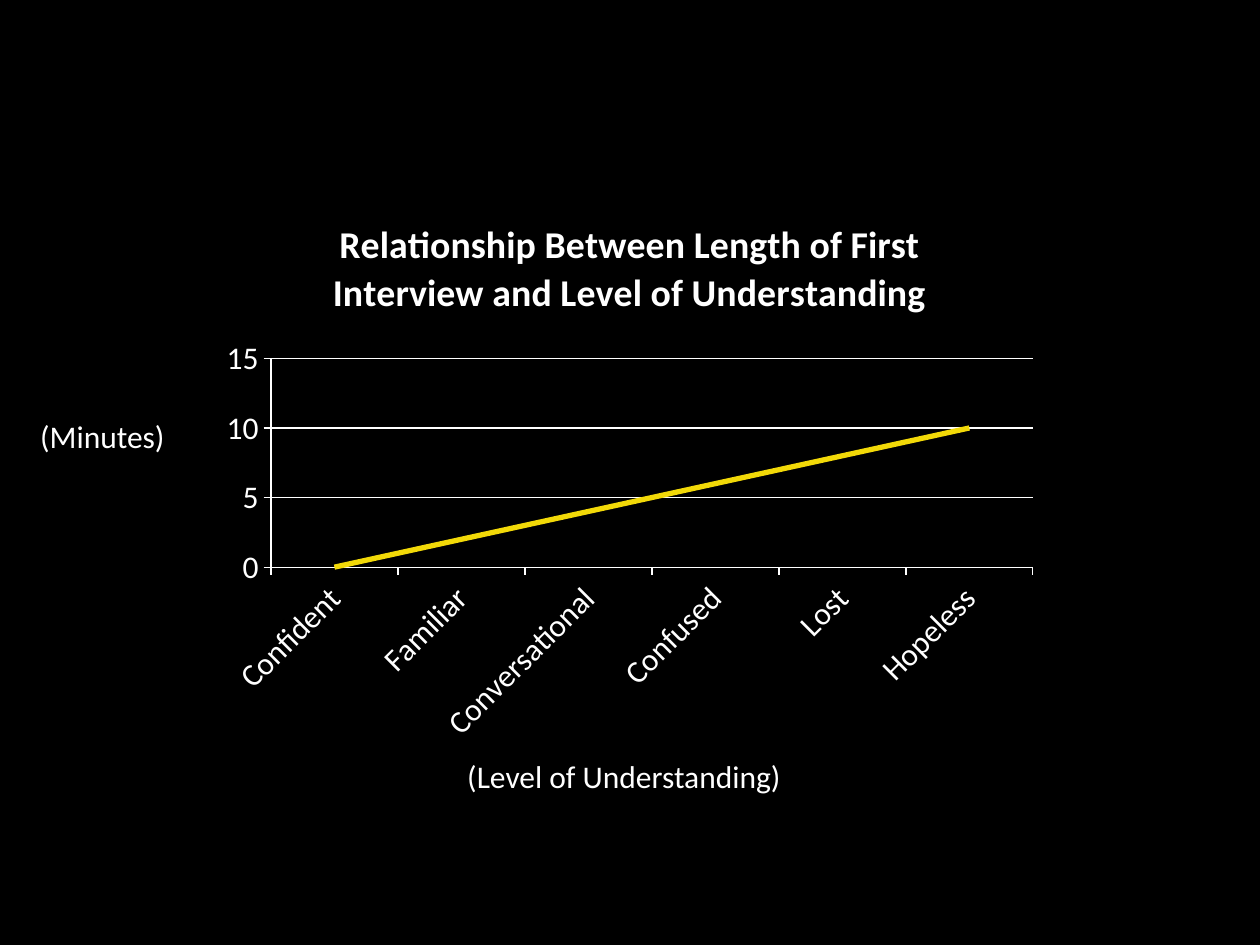
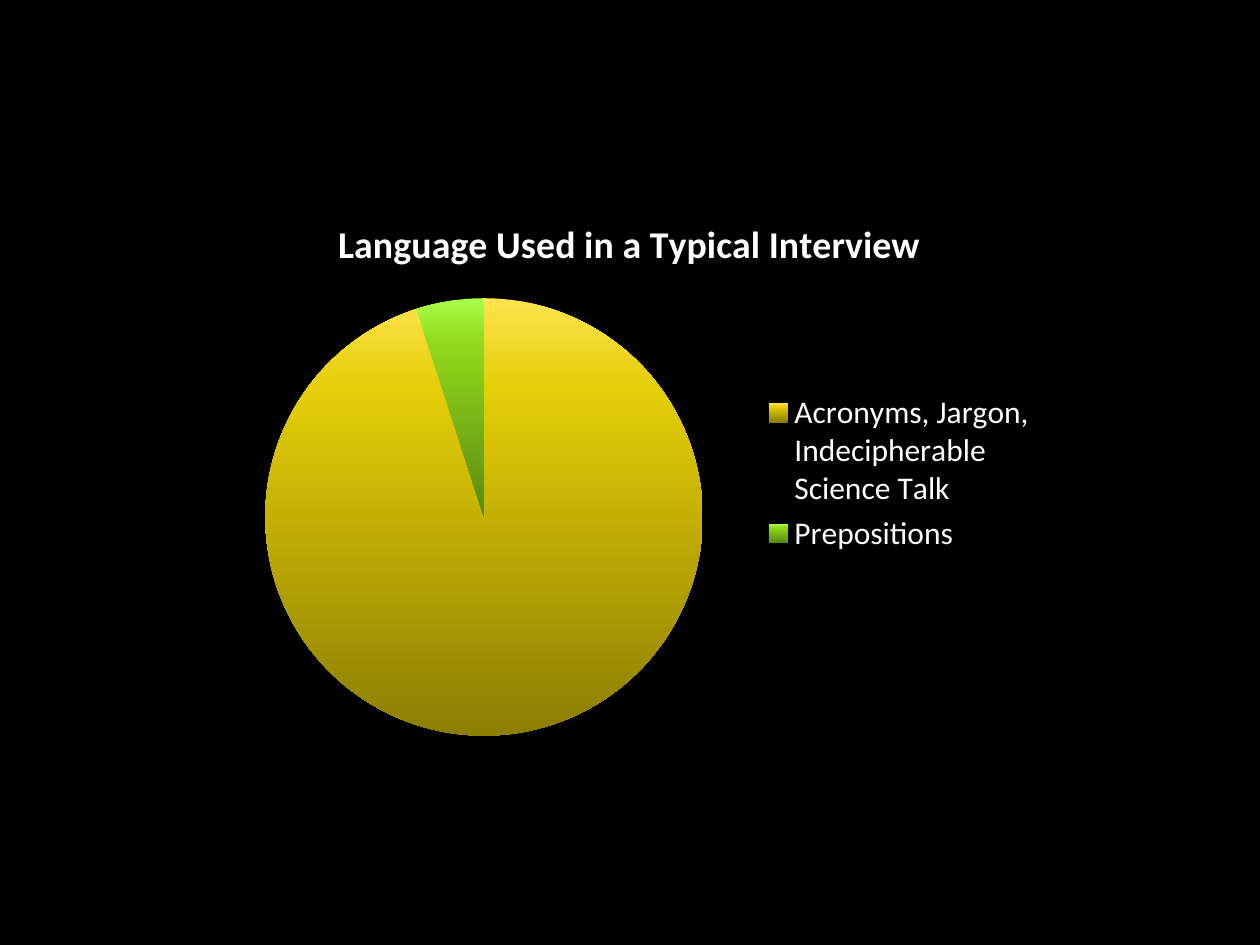
from copy import deepcopy

from pptx import Presentation
from pptx.chart.data import CategoryChartData
from pptx.dml.color import RGBColor
from pptx.enum.chart import XL_CHART_TYPE, XL_LEGEND_POSITION, XL_MARKER_STYLE, XL_TICK_MARK
from pptx.enum.text import MSO_AUTO_SIZE
from pptx.oxml.ns import qn
from pptx.util import Cm, Pt

BLACK, WHITE, YELLOW = "000000", "FFFFFF", "F2D908"
SLICE_SHADES = [("FFE34F", "E6CE08", "8C7E03"), ("A9FF4B", "92DA1C", "5A8812")]
SHADE_POSITIONS = (0, 0.2, 1)


def color(hex_code):
    return RGBColor.from_string(hex_code)


class Deck:
    """Holds the shared style and the current slide, and adds elements to it."""

    font_name, text_size, title_size = "Calibri", Pt(18), Pt(21.6)
    chart_area = Cm(4.23), Cm(3.89), Cm(16.93), Cm(11.29)

    def __init__(self):
        self.prs = Presentation()
        self.prs.slide_width, self.prs.slide_height = Cm(25.4), Cm(19.05)
        backdrop = self.prs.slide_master.background.fill
        backdrop.solid()
        backdrop.fore_color.rgb = color(BLACK)

    def add_slide(self):
        self.slide = self.prs.slides.add_slide(self.prs.slide_layouts[6])

    def style_font(self, font, size, bold=False):
        font.name, font.size, font.bold = self.font_name, size, bold
        font.color.rgb = color(WHITE)

    def style_line(self, line, hex_code, width):
        line.color.rgb = color(hex_code)
        line.width = Pt(width)

    def add_label(self, text, left, top, width):
        label = self.slide.shapes.add_textbox(Cm(left), Cm(top), Cm(width), Cm(1.03))
        frame = label.text_frame
        frame.word_wrap = True
        frame.auto_size = MSO_AUTO_SIZE.SHAPE_TO_FIT_TEXT
        frame.text = text
        self.style_font(frame.paragraphs[0].font, self.text_size)

    def add_chart(self, kind, title, series_name, values):
        data = CategoryChartData()
        data.categories = list(values)
        data.add_series(series_name, values.values())
        chart = self.slide.shapes.add_chart(kind, *self.chart_area, data).chart
        self.style_font(chart.font, self.text_size)
        chart.has_title = True
        heading = chart.chart_title.text_frame
        heading.text = title
        self.style_font(heading.paragraphs[0].font, self.title_size, bold=True)
        chart.has_legend = False
        return chart

    def add_line_chart(self, title, series_name, values):
        chart = self.add_chart(XL_CHART_TYPE.LINE, title, series_name, values)
        chart.plots[0].vary_by_categories = False
        for axis in (chart.category_axis, chart.value_axis):
            self.style_line(axis.format.line, WHITE, 0.75)
            axis.major_tick_mark = XL_TICK_MARK.OUTSIDE
            self.style_font(axis.tick_labels.font, self.text_size)
        chart.category_axis.element_body = None
        slant = chart.category_axis.element if hasattr(chart.category_axis, "element") else None
        if slant is None:
            slant = chart.element.find(".//" + qn("c:catAx"))
        slant.find(qn("c:txPr")).find(qn("a:bodyPr")).set("rot", "-2700000")
        chart.value_axis.has_major_gridlines = True
        self.style_line(chart.value_axis.major_gridlines.format.line, WHITE, 0.75)
        series = chart.plots[0].series[0]
        series.smooth = False
        series.marker.style = XL_MARKER_STYLE.NONE
        self.style_line(series.format.line, YELLOW, 3)

    def add_pie_chart(self, title, values, slice_shades):
        chart = self.add_chart(XL_CHART_TYPE.PIE, title, title, values)
        chart.plots[0].vary_by_categories = True
        chart.has_legend = True
        chart.legend.position = XL_LEGEND_POSITION.RIGHT
        chart.legend.include_in_layout = False
        self.style_font(chart.legend.font, self.text_size)
        points = chart.plots[0].series[0].points
        for index, shades in enumerate(slice_shades):
            fill = points[index].format.fill
            fill.gradient()
            fill.gradient_angle = 270
            stop_list = list(chart.element.iter(qn("a:gsLst")))[index]
            stop_list.insert(1, deepcopy(stop_list[0]))
            for stop, position, shade in zip(fill.gradient_stops, SHADE_POSITIONS, shades):
                stop.position = position
                stop.color.rgb = color(shade)


def main():
    deck = Deck()

    deck.add_slide()
    levels = ["Confident", "Familiar", "Conversational", "Confused", "Lost", "Hopeless"]
    deck.add_line_chart(
        "Relationship Between Length of First Interview and Level of Understanding",
        "Series 1",
        {level: 2 * step for step, level in enumerate(levels)},
    )
    deck.add_label("(Minutes)", 0.56, 8.28, 3.66)
    deck.add_label("(Level of Understanding)", 9.17, 15.14, 9.04)

    deck.add_slide()
    deck.add_pie_chart(
        "Language Used in a Typical Interview",
        {"Acronyms, Jargon, Indecipherable Science Talk": 95, "Prepositions": 5},
        SLICE_SHADES,
    )

    deck.prs.save("out.pptx")


if __name__ == "__main__":
    main()
